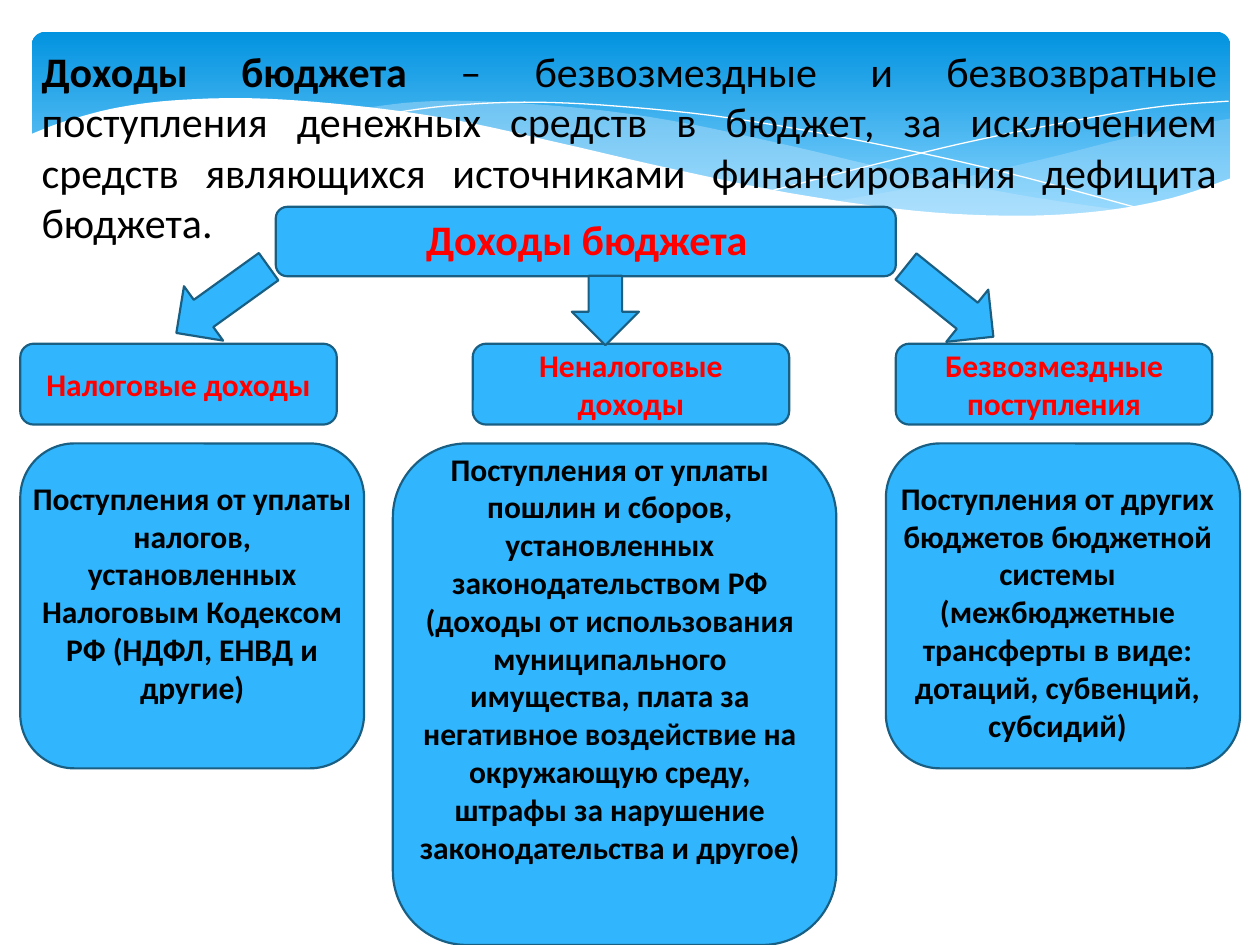
from lxml.etree import SubElement
from pptx import Presentation
from pptx.dml.color import RGBColor
from pptx.enum.shapes import MSO_SHAPE
from pptx.enum.text import MSO_ANCHOR, MSO_AUTO_SIZE, PP_ALIGN
from pptx.oxml.ns import qn
from pptx.util import Cm, Pt

BLUE, EDGE, RED, BLACK, WHITE, MIST = "31B6FD", "195F84", "FF0000", "000000", "FFFFFF", "C6E7FC"

RIGHT_WAVE = [
    [(24.16, 1.75), (23.11, 1.93), (22, 2.16), (20.5, 2.54), (18.49, 3), (16.15, 3.43)],
    [(16.15, 3.43), (17.63, 3.61), (19.2, 3.73), (20.57, 3.73), (21.95, 3.58),
     (23.11, 3.33), (24.16, 2.95)],
]
MIDDLE_WAVE = [
    [(22.05, 3.61), (19.86, 3.28), (17.3, 2.77), (15.34, 2.31), (13.11, 1.83),
     (11.18, 1.55), (9.02, 1.4), (7.7, 1.42), (6.63, 1.55)],
    [(6.63, 1.55), (8.56, 1.83), (10.77, 2.31), (13.74, 3), (15.88, 3.38),
     (17.7, 3.63), (19.86, 3.76), (21.13, 3.71), (22.05, 3.61)],
]
FALLING_LINE = [[(7.21, 1.65), (8.33, 1.5), (9.93, 1.42), (11.79, 1.5), (14.15, 1.75),
                 (17.02, 2.26), (19.56, 2.82), (22.4, 3.58)]]
RISING_LINE = [[(14.94, 3.2), (17.02, 2.67), (19.08, 2.18), (21.36, 1.73),
                (22.83, 1.5), (24.13, 1.4)]]
WHITE_WAVE = [
    [(24.18, 2.95), (22.99, 3.35), (21.59, 3.61), (19.91, 3.71), (17.81, 3.61),
     (15.27, 3.25), (12.8, 2.74), (10.72, 2.26), (8.64, 1.8), (6.78, 1.52),
     (4.72, 1.35), (3.07, 1.37), (1.78, 1.52), (0.69, 1.8), (-0.05, 2.08)],
    [(-0.05, 5.05), (24.18, 5.05)],
]

CARDS = [
    ("Налоговые доходы", (0.41, 6.93, 6.38, 1.63), (0.41, 8.94, 6.93, 6.55), (0, 0.59, 6.93, 5.64),
     "Поступления от уплаты налогов, установленных Налоговым Кодексом РФ (НДФЛ, ЕНВД и другие)"),
    ("Неналоговые доходы", (9.53, 6.93, 6.38, 1.63), (7.92, 8.94, 8.94, 10.11), (0.21, 0, 8.33, 9.5),
     "Поступления от уплаты пошлин и сборов, установленных законодательством РФ "
     "(доходы от использования муниципального имущества, плата за негативное воздействие "
     "на окружающую среду, штрафы за нарушение законодательства и другое)"),
    ("Безвозмездные поступления", (18.06, 6.93, 6.38, 1.63), (17.86, 8.94, 7.14, 6.55),
     (-0.21, 0.59, 7.34, 5.64),
     "Поступления от других бюджетов бюджетной системы (межбюджетные трансферты в виде: "
     "дотаций, субвенций, субсидий)"),
]
ARROWS = [((3.81, 4.9, 1.35, 2.29), 54.3), ((18.47, 4.95, 1.35, 2.26), 308.8),
          ((11.53, 5.56, 1.35, 1.4), 0)]


def rgb(color):
    """Turn a hex string into a colour."""
    return RGBColor.from_string(color)


def lengths(box):
    """Turn a box in centimetres into lengths."""
    return [Cm(v) for v in box]


def inside(box, part):
    """Place a part, given by offset and size, inside a box."""
    return box[0] + part[0], box[1] + part[1], part[2], part[3]


def add_block(s, kind, box, rotation=0):
    """Add a blue outlined shape."""
    sp = s.shapes.add_shape(kind, *lengths(box))
    sp.shadow.inherit = False
    sp.rotation = rotation
    sp.fill.solid()
    sp.fill.fore_color.rgb = rgb(BLUE)
    sp.line.color.rgb = rgb(EDGE)
    sp.line.width = Pt(1.25)
    return sp


def write(sp, runs, size, color, align=PP_ALIGN.CENTER):
    """Write one paragraph of (text, bold) runs into a shape."""
    sp.text_frame.word_wrap = True
    p = sp.text_frame.paragraphs[0]
    p.alignment = align
    for text, bold in runs:
        r = p.add_run()
        r.text = text
        r.font.color.rgb = rgb(color)
        for name, value in {"name": "Calibri", "size": Pt(size), "bold": bold}.items():
            setattr(r.font, name, value)


def add_text(s, box, runs, size, color, align=PP_ALIGN.CENTER):
    """Add a text box that grows with its text."""
    sp = s.shapes.add_textbox(*lengths(box))
    write(sp, runs, size, color, align)
    sp.text_frame.auto_size = MSO_AUTO_SIZE.SHAPE_TO_FIT_TEXT


def smooth_points(points, steps=6):
    """Sample a Catmull-Rom curve through the points."""
    padded = [points[0], *points, points[-1]]
    result = [points[0]]
    for a, b, c, d in zip(padded, padded[1:], padded[2:], padded[3:]):
        for t in (i / steps for i in range(1, steps + 1)):
            result.append(tuple(
                (2 * q + (r - p) * t + (2 * p - 5 * q + 4 * r - u) * t ** 2
                 + (3 * q - p - 3 * r + u) * t ** 3) / 2
                for p, q, r, u in zip(a, b, c, d)))
    return result


def add_wave(s, box, curves, fill=None, alpha=100):
    """Add a filled wave, or a thin white line when there is no fill."""
    points = [(Cm(box[0] + x), Cm(box[1] + y))
              for curve in curves for x, y in smooth_points(curve)]
    builder = s.shapes.build_freeform(*points[0])
    builder.add_line_segments(points[1:], close=fill is not None)
    sp = builder.convert_to_shape()
    sp.shadow.inherit = False
    if fill is None:
        sp.fill.background()
        sp.line.color.rgb = rgb(WHITE)
        sp.line.width = Pt(0)
        return
    sp.line.fill.background()
    sp.fill.solid()
    sp.fill.fore_color.rgb = rgb(fill)
    if alpha < 100:
        color = sp.fill._xPr.find(qn("a:solidFill")).find(qn("a:srgbClr"))
        SubElement(color, qn("a:alpha"), val=str(alpha * 1000))


def add_header(s, box):
    """Draw the gradient banner with its waves and the definition."""
    sp = s.shapes.add_shape(MSO_SHAPE.ROUNDED_RECTANGLE, *lengths(box))
    sp.shadow.inherit = False
    sp.adjustments[0] = 0.07
    sp.line.fill.background()
    sp.fill.gradient()
    sp.fill.gradient_angle = 270
    for stop, (position, color) in zip(sp.fill.gradient_stops, [(0, "0293E0"), (0.9, "83D3FE")]):
        stop.position = position
        stop.color.rgb = rgb(color)
    add_wave(s, box, RIGHT_WAVE, MIST, 29)
    add_wave(s, box, MIDDLE_WAVE, MIST, 40)
    add_wave(s, box, FALLING_LINE)
    add_wave(s, box, RISING_LINE)
    add_wave(s, box, WHITE_WAVE, WHITE)
    runs = [("Доходы бюджета ", True),
            ("– безвозмездные и безвозвратные поступления денежных средств в бюджет, за исключением "
             "средств являющихся источниками финансирования дефицита бюджета.", False)]
    add_text(s, inside(box, (-0.05, 0.15, 24.2, 3.33)), runs, 24, BLACK, PP_ALIGN.JUSTIFY)


def add_card(s, heading, heading_box, box, text_part, text):
    """Draw an income type: its heading and the description below."""
    add_block(s, MSO_SHAPE.FLOWCHART_ALTERNATE_PROCESS, box)
    add_text(s, inside(box, text_part), [(text, True)], 18, BLACK)
    sp = add_block(s, MSO_SHAPE.FLOWCHART_ALTERNATE_PROCESS, heading_box)
    sp.text_frame.vertical_anchor = MSO_ANCHOR.MIDDLE
    write(sp, [(heading, True)], 18, RED)


def add_root(s, box):
    """Draw the top box of the scheme and the arrows to the income types."""
    add_block(s, MSO_SHAPE.ROUNDED_RECTANGLE, box)
    add_text(s, inside(box, (0.21, 0, 12.12, 1.27)), [("Доходы бюджета", True)], 24, RED)
    for arrow_box, rotation in ARROWS:
        add_block(s, MSO_SHAPE.DOWN_ARROW, arrow_box, rotation)


def main():
    """Build the slide and save it."""
    prs = Presentation()
    prs.slide_width, prs.slide_height = Cm(25.4), Cm(19.05)
    s = prs.slides.add_slide(prs.slide_layouts[6])
    add_header(s, (0.64, 0.64, 24.16, 3.96))
    for card in CARDS:
        add_card(s, *card)
    add_root(s, (5.56, 4.17, 12.5, 1.4))
    prs.save("out.pptx")


if __name__ == "__main__":
    main()
